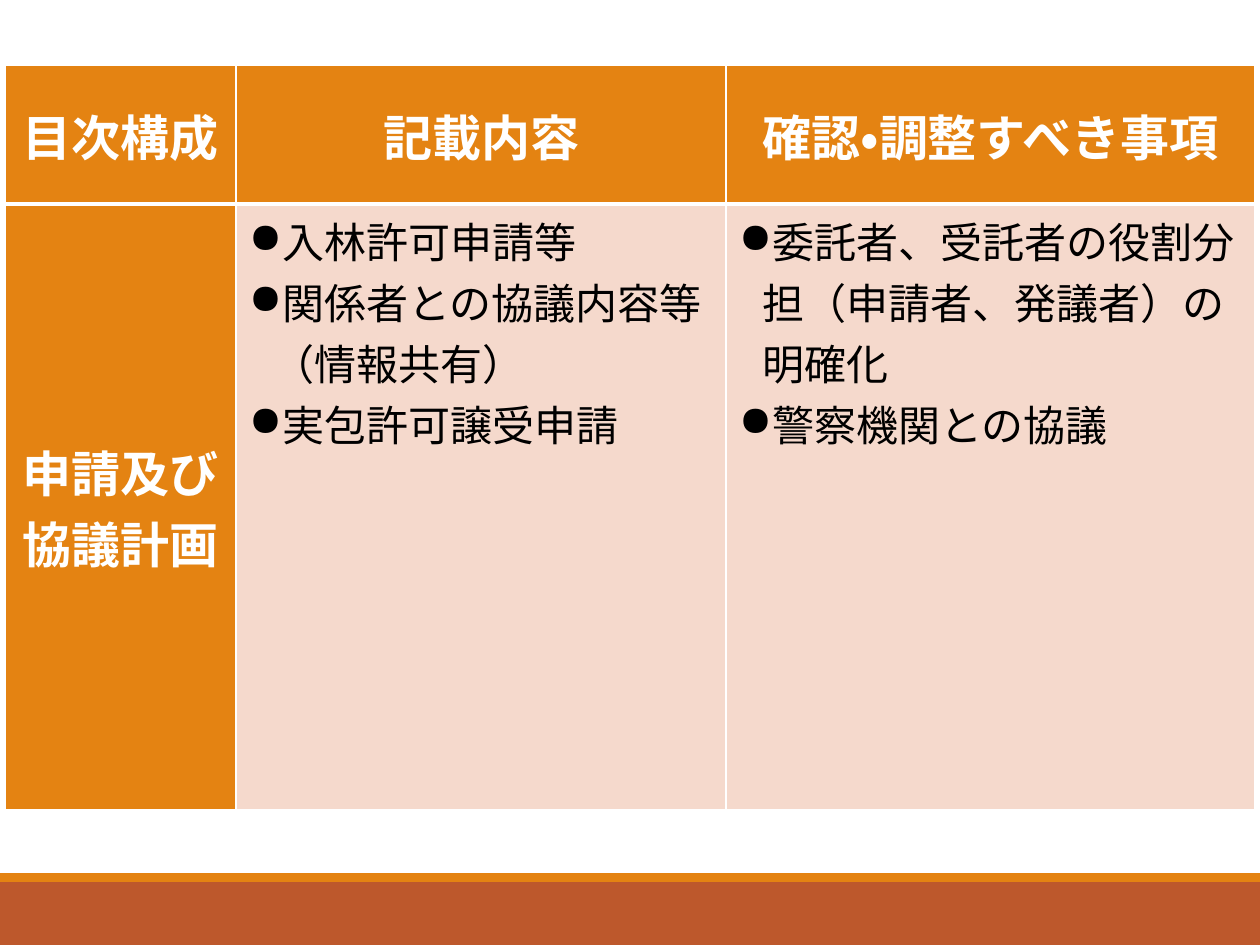
import pptx
import pptx.util
import pptx.oxml
import pptx.dml.color
import pptx.enum.lang
import pptx.enum.shapes
import pptx.enum.text
import lxml.etree

Pt = pptx.util.Pt
ALIGN = pptx.enum.text.PP_ALIGN
ANCHOR = pptx.enum.text.MSO_ANCHOR
JAPANESE = pptx.enum.lang.MSO_LANGUAGE_ID.JAPANESE
NS = "http://schemas.openxmlformats.org/drawingml/2006/main"

COLORS = {
    "rust": "BD582C",
    "orange": "E48312",
    "pink": "F5D9CC",
    "white": "FFFFFF",
    "black": "000000",
}
HEADING = {
    "font": {"name": "Calibri", "size": Pt(28), "bold": True, "language_id": JAPANESE},
    "align": ALIGN.CENTER, "anchor": ANCHOR.MIDDLE,
    "color": "white", "fill": "orange", "bullet": None,
}
LIST = {
    "font": {"name": "Calibri", "size": Pt(24), "bold": False, "language_id": JAPANESE},
    "align": ALIGN.LEFT, "anchor": ANCHOR.TOP,
    "color": "black", "fill": "pink", "bullet": "●",
}
ROWS = [
    [["目次構成"], ["記載内容"], ["確認・調整すべき事項"]],
    [
        ["申請及び協議計画"],
        ["入林許可申請等", "関係者との協議内容等（情報共有）", "実包許可譲受申請"],
        ["委託者、受託者の役割分担（申請者、発議者）の明確化", "警察機関との協議"],
    ],
]


class Deck:
    def __init__(self, width, height):
        self.prs = pptx.Presentation()
        self.prs.slide_width, self.prs.slide_height = Pt(width), Pt(height)
        self.s = self.prs.slides.add_slide(self.prs.slide_layouts[6])

    def rgb(self, name):
        return pptx.dml.color.RGBColor.from_string(COLORS[name])

    def bar(self, x, y, w, h, color):
        sp = self.s.shapes.add_shape(
            pptx.enum.shapes.MSO_SHAPE.RECTANGLE, Pt(x), Pt(y), Pt(w), Pt(h))
        sp.shadow.inherit = False
        sp.fill.solid()
        sp.fill.fore_color.rgb = self.rgb(color)
        sp.line.fill.background()

    def borders(self, cell, widths):
        tcPr = cell._tc.get_or_add_tcPr()
        for side, width in widths.items():
            tcPr.append(pptx.oxml.parse_xml(
                f'<a:ln{side} xmlns:a="{NS}" w="{Pt(width)}"><a:solidFill>'
                f'<a:srgbClr val="{COLORS["white"]}"/></a:solidFill></a:ln{side}>'))

    def bullet(self, p, char, indent):
        pPr = p._p.get_or_add_pPr()
        pPr.set("marL", str(Pt(indent)))
        pPr.set("indent", str(-Pt(indent)))
        lxml.etree.SubElement(pPr, f"{{{NS}}}buChar").set("char", char)

    def cell(self, cell, lines, style):
        cell.fill.solid()
        cell.fill.fore_color.rgb = self.rgb(style["fill"])
        cell.vertical_anchor = style["anchor"]
        tf = cell.text_frame
        for i, line in enumerate(lines):
            p = tf.add_paragraph() if i else tf.paragraphs[0]
            p.alignment = style["align"]
            if style["bullet"]:
                self.bullet(p, style["bullet"], 13.5)
            r = p.add_run()
            r.text = line
            for key, value in style["font"].items():
                setattr(r.font, key, value)
            r.font.color.rgb = self.rgb(style["color"])

    def table(self, x, y, widths, heights, rows):
        table = self.s.shapes.add_table(
            len(heights), len(widths), Pt(x), Pt(y), Pt(sum(widths)), Pt(sum(heights))).table
        for column, width in zip(table.columns, widths):
            column.width = Pt(width)
        for row, height in zip(table.rows, heights):
            row.height = Pt(height)
        for i, row in enumerate(rows):
            for j, lines in enumerate(row):
                cell = table.cell(i, j)
                top, bottom = (3, 1) if i else (1, 3)
                self.borders(cell, {"L": 1, "R": 1, "T": top, "B": bottom})
                self.cell(cell, lines, LIST if i and j else HEADING)


def main():
    deck = Deck(720, 540)
    deck.bar(0, 504, 720, 36, "rust")
    deck.bar(0, 499, 720, 5, "orange")
    deck.table(3, 37.5, [132, 280, 302], [79, 346.5], ROWS)
    deck.prs.save("out.pptx")


if __name__ == "__main__":
    main()
